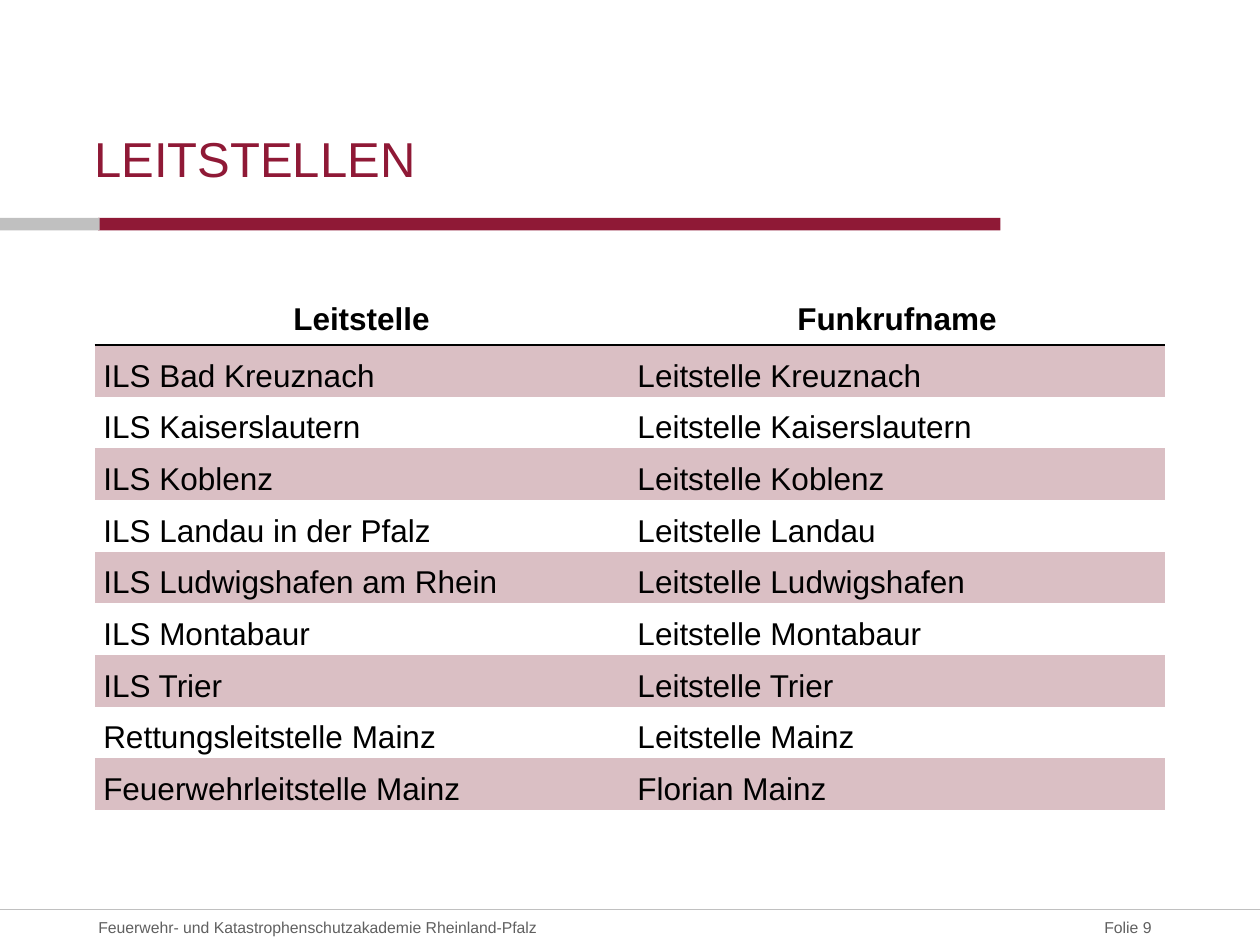
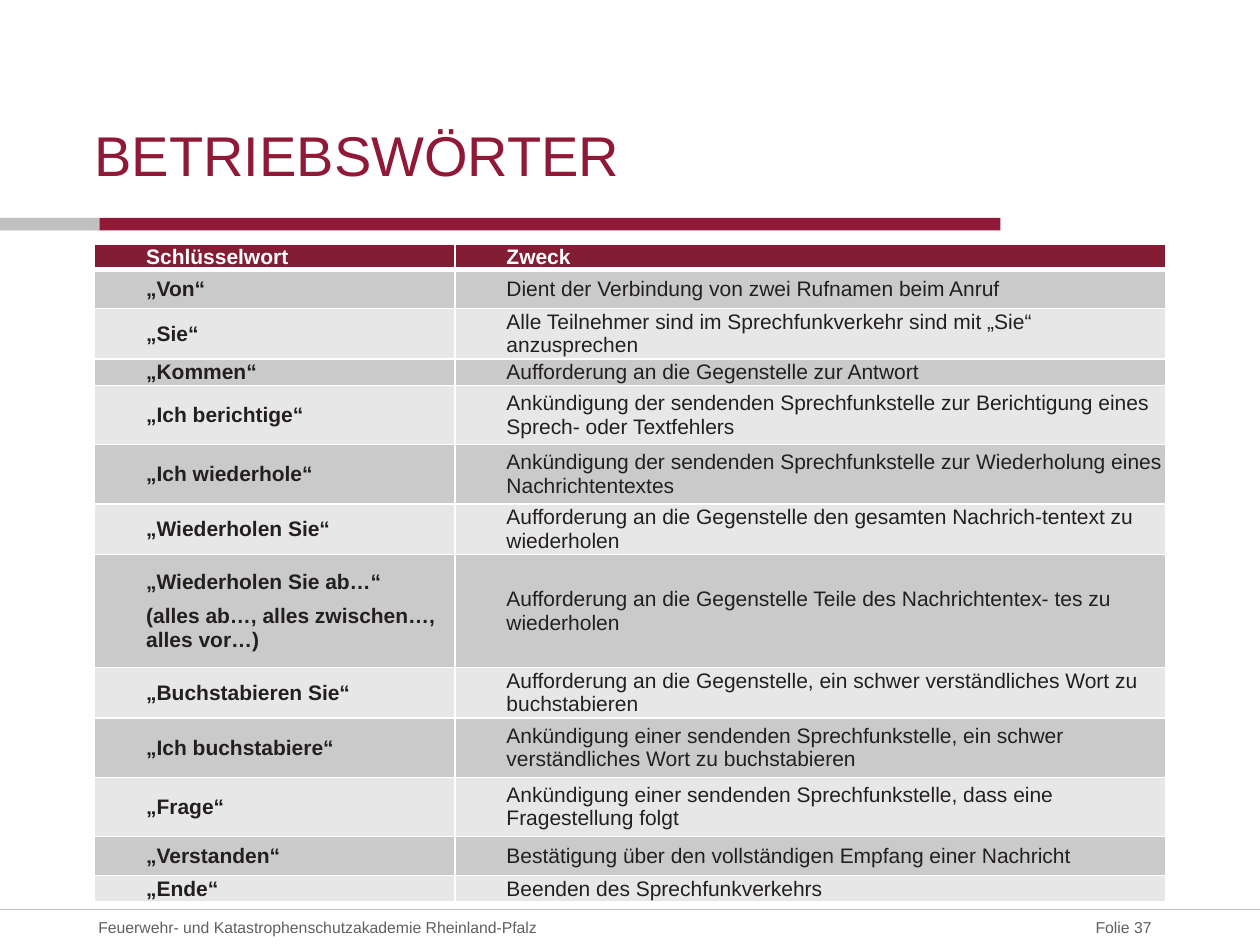
"""Builds two table slides on radio call names and procedure words."""
from lxml.etree import SubElement
from pptx import Presentation
from pptx.dml.color import RGBColor as Rgb
from pptx.enum.shapes import MSO_CONNECTOR as Connector, MSO_SHAPE as Shape
from pptx.enum.text import MSO_ANCHOR as Anchor, MSO_AUTO_SIZE as AutoSize, PP_ALIGN as Align
from pptx.oxml.ns import qn
from pptx.util import Inches, Pt

COLORS = {
    "wine": "8F1936", "silver": "C0C0C0", "footer": "606060",
    "rose": "DABFC4", "black": "000000", "white": "FFFFFF",
    "header": "831D33", "ink": "231F20", "dark_band": "CBCACB", "light_band": "E8E7E7",
}
FONT = "Arial"
COLUMNS, ROWS = 100, 75
FOOTER = "Feuerwehr- und Katastrophenschutzakademie Rheinland-Pfalz"

CONTROL_CENTRES = [
    ("Leitstelle", "Funkrufname"),
    ("ILS Bad Kreuznach", "Leitstelle Kreuznach"),
    ("ILS Kaiserslautern", "Leitstelle Kaiserslautern"),
    ("ILS Koblenz", "Leitstelle Koblenz"),
    ("ILS Landau in der Pfalz", "Leitstelle Landau"),
    ("ILS Ludwigshafen am Rhein", "Leitstelle Ludwigshafen"),
    ("ILS Montabaur", "Leitstelle Montabaur"),
    ("ILS Trier", "Leitstelle Trier"),
    ("Rettungsleitstelle Mainz", "Leitstelle Mainz"),
    ("Feuerwehrleitstelle Mainz", "Florian Mainz"),
]
PROCEDURE_WORDS = [
    ("Schlüsselwort", "Zweck"),
    ("„Von“", "Dient der Verbindung von zwei Rufnamen beim Anruf"),
    ("„Sie“", "Alle Teilnehmer sind im Sprechfunkverkehr sind mit „Sie“ anzusprechen"),
    ("„Kommen“", "Aufforderung an die Gegenstelle zur Antwort"),
    ("„Ich berichtige“", "Ankündigung der sendenden Sprechfunkstelle zur Berichtigung "
     "eines Sprech- oder Textfehlers"),
    ("„Ich wiederhole“", "Ankündigung der sendenden Sprechfunkstelle zur Wiederholung "
     "eines Nachrichtentextes"),
    ("„Wiederholen Sie“", "Aufforderung an die Gegenstelle den gesamten Nachrich-tentext "
     "zu wiederholen"),
    ("„Wiederholen Sie ab…“\n(alles ab…, alles zwischen…, alles vor…)",
     "Aufforderung an die Gegenstelle Teile des Nachrichtentex- tes zu wiederholen"),
    ("„Buchstabieren Sie“", "Aufforderung an die Gegenstelle, ein schwer verständliches "
     "Wort zu buchstabieren"),
    ("„Ich buchstabiere“", "Ankündigung einer sendenden Sprechfunkstelle, ein schwer "
     "verständliches Wort zu buchstabieren"),
    ("„Frage“", "Ankündigung einer sendenden Sprechfunkstelle, dass eine Fragestellung folgt"),
    ("„Verstanden“", "Bestätigung über den vollständigen Empfang einer Nachricht"),
    ("„Ende“", "Beenden des Sprechfunkverkehrs"),
]
WORD_ROW_HEIGHTS = [2, 3.1, 4, 2.1, 4.7, 4.7, 4, 9, 4, 4.7, 4.7, 3.1, 2.1]


def color(name):
    """Return the named colour."""
    return Rgb.from_string(COLORS[name])


def write(frame, text, size=9, ink="footer", bold=False, align=Align.LEFT,
          line_spacing=None, gap=0):
    """Fill a text frame, one paragraph per line, with one format."""
    frame.word_wrap = True
    frame.text = text
    for index, paragraph in enumerate(frame.paragraphs):
        paragraph.alignment = align
        if line_spacing:
            paragraph.line_spacing = line_spacing
        paragraph.space_before = Pt(gap if index else 0)
        for run in paragraph.runs:
            font = run.font
            font.name, font.size, font.bold = FONT, Pt(size), bold
            font.color.rgb = color(ink)


def set_borders(cell, borders):
    """Draw the given sides of a cell as (colour, points) and hide the others."""
    properties = cell._tc.get_or_add_tcPr()
    for side in "LRTB":
        name, points = borders.get(side, (None, 0))
        line = SubElement(properties, qn(f"a:ln{side}"), w=str(Pt(points)))
        if name:
            fill = SubElement(line, qn("a:solidFill"))
            SubElement(fill, qn("a:srgbClr"), val=COLORS[name])
        else:
            SubElement(line, qn("a:noFill"))


class Deck:
    """Holds the presentation, its grid and the current slide."""

    def __init__(self):
        """Open an empty deck and measure its grid."""
        self.show = Presentation()
        self.show.slide_width, self.show.slide_height = Inches(10), Inches(7.5)
        self.column = self.show.slide_width / COLUMNS
        self.row = self.show.slide_height / ROWS
        self.slide = None

    def place(self, left, top, width, height):
        """Convert a grid area to slide lengths."""
        return (round(left * self.column), round(top * self.row),
                round(width * self.column), round(height * self.row))

    def add_slide(self, title, number, title_size):
        """Start a slide with the shared bands, footer and title."""
        self.slide = self.show.slides.add_slide(self.show.slide_layouts[5])
        self.band("wine", 7.8, 17.3, 71.6, 1)
        self.band("silver", 0, 17.3, 7.9, 1)
        self.rule(72.2)
        self.text(f"Folie {number}", 79.4, 72.2, 12.7, 2.8, inset=0.07, align=Align.RIGHT)
        self.text(FOOTER, 7.8, 72.2, 55.1, 2.8)
        self.title(title, title_size)

    def title(self, title, size):
        """Move and format the title placeholder."""
        heading = self.slide.shapes.title
        heading.left, heading.top, heading.width, heading.height = self.place(7.5, 4.8, 63.9, 10.1)
        self.fit(heading.text_frame, Anchor.BOTTOM)
        write(heading.text_frame, title, size=size, ink="wine")

    def fit(self, frame, anchor, right=0):
        """Set the anchor and insets of a text frame."""
        frame.auto_size = AutoSize.NONE
        frame.vertical_anchor = anchor
        frame.margin_left = frame.margin_top = frame.margin_bottom = 0
        frame.margin_right = Inches(right)

    def band(self, fill, *area):
        """Draw a plain filled rectangle."""
        bar = self.slide.shapes.add_shape(Shape.RECTANGLE, *self.place(*area))
        bar.shadow.inherit = False
        bar.fill.solid()
        bar.fill.fore_color.rgb = color(fill)
        bar.line.fill.background()

    def rule(self, top):
        """Draw a thin line across the slide."""
        left, y, right, _ = self.place(0, top, COLUMNS, 0)
        line = self.slide.shapes.add_connector(Connector.STRAIGHT, left, y, right, y)
        line.line.color.rgb = color("silver")
        line.line.width = Pt(0.75)
        SubElement(line._element.spPr, qn("a:effectLst"))

    def text(self, text, *area, inset=0, **style):
        """Add a text box."""
        frame = self.slide.shapes.add_textbox(*self.place(*area)).text_frame
        self.fit(frame, Anchor.MIDDLE, inset)
        write(frame, text, **style)

    def table(self, entries, top, widths, heights, insets, look):
        """Add a table; look gives fill, borders and text format by row and column."""
        area = self.place(7.5, top, sum(widths), sum(heights))
        table = self.slide.shapes.add_table(len(entries), len(widths), *area).table
        table.first_row = table.horz_banding = False
        for column, width in zip(table.columns, widths):
            column.width = round(width * self.column)
        for r, (height, entry) in enumerate(zip(heights, entries)):
            table.rows[r].height = round(height * self.row)
            for c, text in enumerate(entry):
                cell = table.cell(r, c)
                fill, borders, style = look(r, c)
                cell.vertical_anchor = Anchor.MIDDLE
                cell.margin_left, cell.margin_right = map(Inches, insets)
                cell.margin_top = cell.margin_bottom = 0
                set_borders(cell, borders)
                if fill:
                    cell.fill.solid()
                    cell.fill.fore_color.rgb = color(fill)
                else:
                    cell.fill.background()
                write(cell.text_frame, text, **style)


def centre_look(row, column):
    """Style the control centre table: ruled header, rose on odd rows."""
    style = {"size": 18, "ink": "black"}
    if row == 0:
        return None, {"B": ("black", 1)}, {**style, "bold": True, "align": Align.CENTER}
    borders = {"T": ("black", 1)} if row == 1 else {}
    style.update(align=Align.JUSTIFY, line_spacing=1.3)
    return "rose" if row % 2 else None, borders, style


def word_look(row, column):
    """Style the procedure word table: wine header, grey bands, white grid."""
    borders = {side: ("white", 1) for side in "LRTB"}
    if row < 2:
        borders["T" if row else "B"] = ("white", 3)
    fill = ("dark_band" if row % 2 else "light_band") if row else "header"
    style = {"size": 12, "ink": "ink" if row else "white",
             "bold": row == 0 or column == 0, "gap": 6}
    return fill, borders, style


def main():
    """Build and save both slides."""
    deck = Deck()
    deck.add_slide("LEITSTELLEN", 9, 28)
    deck.table(CONTROL_CENTRES, 23.3, [42.4, 42.6], [4.1] * len(CONTROL_CENTRES),
               (0.07, 0.07), centre_look)
    deck.add_slide("BETRIEBSWÖRTER", 37, 32)
    deck.table(PROCEDURE_WORDS, 19.4, [28.6, 56.4], WORD_ROW_HEIGHTS, (0.41, 0), word_look)
    deck.show.save("out.pptx")


if __name__ == "__main__":
    main()
